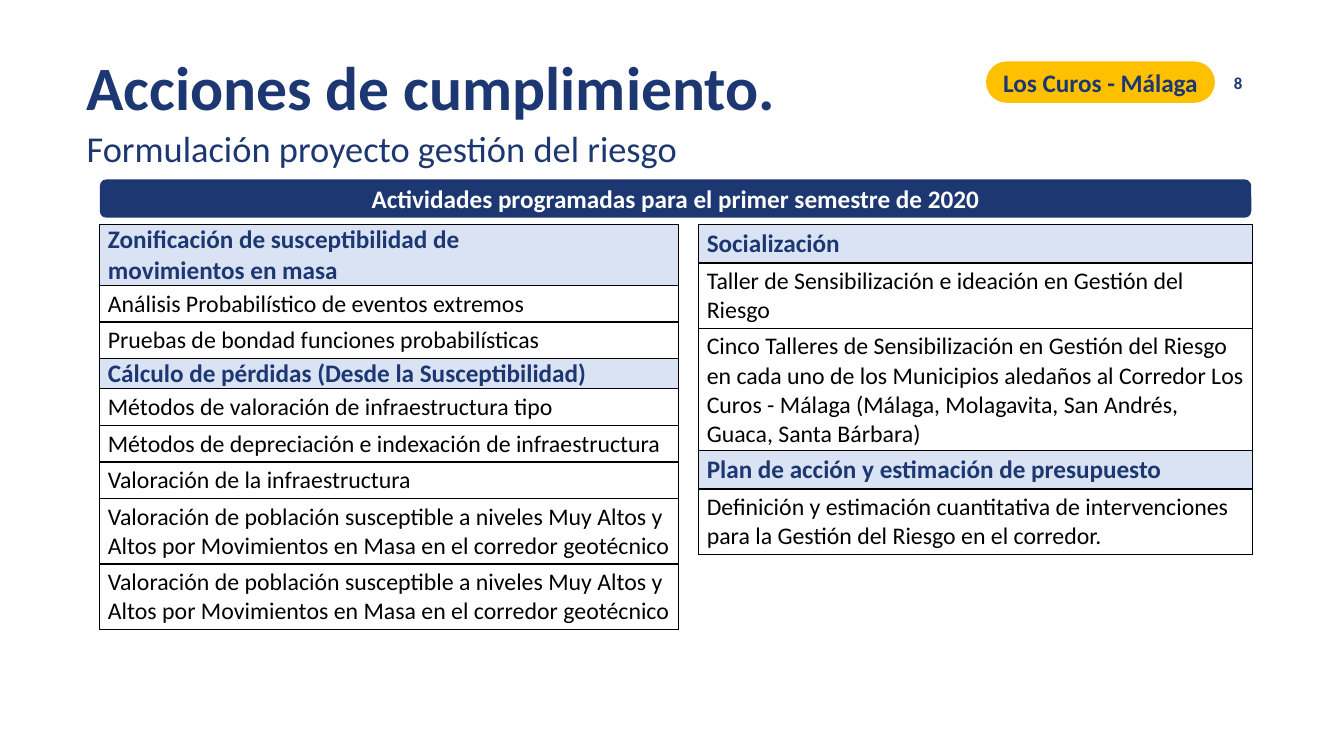
from lxml import etree
from pptx import Presentation
from pptx.dml.color import RGBColor
from pptx.enum.shapes import MSO_SHAPE
from pptx.enum.text import MSO_ANCHOR, PP_ALIGN
from pptx.oxml.ns import qn
from pptx.util import Inches, Pt

NAVY, GOLD, PALE, BLACK, WHITE = "1C3771", "FFC000", "DAE3F3", "000000", "FFFFFF"
HEADING = {"size": Pt(18), "bold": True, "color": NAVY}
ACTIVITY = {"size": Pt(17), "bold": False, "color": BLACK}
ONE_LINE, TWO_LINES = 0.24, 0.47


def rgb(value):
    return RGBColor.from_string(value)


class SlideBuilder:
    font_name = "Calibri"

    def __init__(self, page):
        self.page = page

    def fill_paragraph(self, para, text, style, align=PP_ALIGN.LEFT, line_spacing=None):
        para.alignment = align
        para.line_spacing = line_spacing
        for index, line in enumerate(text.split("\n")):
            if index:
                para.add_line_break()
            span = para.add_run()
            span.text = line
            span.font.name = self.font_name
            span.font.color.rgb = rgb(style["color"])
            for name in ("size", "bold"):
                setattr(span.font, name, style[name])

    def text_box(self, place, lines, align=PP_ALIGN.LEFT, anchor=MSO_ANCHOR.TOP,
                 line_spacing=None):
        box = self.page.shapes.add_textbox(*map(Inches, place))
        frame = box.text_frame
        frame.word_wrap = True
        frame.vertical_anchor = anchor
        for index, (text, style) in enumerate(lines):
            para = frame.add_paragraph() if index else frame.paragraphs[0]
            self.fill_paragraph(para, text, style, align, line_spacing)

    def banner(self, place, text, fill, color, rounding):
        shape = self.page.shapes.add_shape(MSO_SHAPE.ROUNDED_RECTANGLE, *map(Inches, place))
        shape.adjustments[0] = rounding
        shape.shadow.inherit = False
        shape.fill.solid()
        shape.fill.fore_color.rgb = rgb(fill)
        shape.line.fill.background()
        frame = shape.text_frame
        frame.word_wrap = True
        frame.vertical_anchor = MSO_ANCHOR.MIDDLE
        self.fill_paragraph(frame.paragraphs[0], text, {**HEADING, "color": color},
                            PP_ALIGN.CENTER)

    def border(self, cell):
        properties = cell._tc.get_or_add_tcPr()
        for index, side in enumerate(("a:lnL", "a:lnR", "a:lnT", "a:lnB")):
            line = etree.Element(qn(side), w=str(Pt(1)))
            fill = etree.SubElement(line, qn("a:solidFill"))
            etree.SubElement(fill, qn("a:srgbClr"), val=BLACK)
            properties.insert(index, line)

    def activity_table(self, left, top, width, rows, right_margin, heading_margin):
        height = sum(row[2] for row in rows)
        frame = self.page.shapes.add_table(
            len(rows), 1, *map(Inches, (left, top, width, height)))
        table = frame.table
        table.first_row = table.horz_banding = False
        for index, (text, style, row_height) in enumerate(rows):
            table.rows[index].height = Inches(row_height)
            cell = table.cell(index, 0)
            is_heading = style is HEADING
            vertical = heading_margin if is_heading else 0.04
            layout = {
                "margin_left": Inches(0.08), "margin_right": Inches(right_margin),
                "margin_top": Inches(vertical), "margin_bottom": Inches(vertical),
                "vertical_anchor": MSO_ANCHOR.MIDDLE,
            }
            for name, value in layout.items():
                setattr(cell, name, value)
            if is_heading:
                cell.fill.solid()
                cell.fill.fore_color.rgb = rgb(PALE)
            else:
                cell.fill.background()
            self.border(cell)
            self.fill_paragraph(cell.text_frame.paragraphs[0], text, style)


POPULATION = ("Valoración de población susceptible a niveles Muy Altos y Altos "
              "por Movimientos en Masa en el corredor geotécnico", ACTIVITY, TWO_LINES)
RISK_ROWS = [
    ("Zonificación de susceptibilidad de\nmovimientos en masa", HEADING, ONE_LINE),
    ("Análisis Probabilístico de eventos extremos", ACTIVITY, ONE_LINE),
    ("Pruebas de bondad funciones probabilísticas", ACTIVITY, ONE_LINE),
    ("Cálculo de pérdidas (Desde la Susceptibilidad)", HEADING, ONE_LINE),
    ("Métodos de valoración de infraestructura tipo", ACTIVITY, ONE_LINE),
    ("Métodos de depreciación e indexación de infraestructura", ACTIVITY, ONE_LINE),
    ("Valoración de la infraestructura", ACTIVITY, ONE_LINE),
    POPULATION,
    POPULATION,
]
OUTREACH_ROWS = [
    ("Socialización", HEADING, ONE_LINE),
    ("Taller de Sensibilización e ideación en Gestión del Riesgo", ACTIVITY, TWO_LINES),
    ("Cinco Talleres de Sensibilización en Gestión del Riesgo en cada uno de los "
     "Municipios aledaños al Corredor Los Curos - Málaga (Málaga, Molagavita, "
     "San Andrés, Guaca, Santa Bárbara)", ACTIVITY, TWO_LINES),
    ("Plan de acción y estimación de presupuesto", HEADING, ONE_LINE),
    ("Definición y estimación cuantitativa de intervenciones para la Gestión del "
     "Riesgo en el corredor.", ACTIVITY, ONE_LINE),
]


def main():
    deck = Presentation()
    deck.slide_width, deck.slide_height = Inches(13.33), Inches(7.5)
    builder = SlideBuilder(deck.slides.add_slide(deck.slide_layouts[6]))

    # Title, corridor label and page number
    builder.text_box((0.76, 0.39, 9.02, 1.34), [
        ("Acciones de cumplimiento.", {**HEADING, "size": Pt(44)}),
        ("Formulación proyecto gestión del riesgo",
         {**HEADING, "size": Pt(26), "bold": False}),
    ], line_spacing=1.07)
    builder.banner((9.78, 0.61, 2.27, 0.41), "Los Curos - Málaga", GOLD, NAVY, 0.5)
    builder.text_box((9.42, 0.62, 3, 0.4), [("8", {**HEADING, "size": Pt(12)})],
                     PP_ALIGN.RIGHT, MSO_ANCHOR.MIDDLE)

    # Activity tables under their shared banner
    builder.activity_table(0.99, 2.23, 5.74, RISK_ROWS, 0.04, 0)
    builder.activity_table(6.93, 2.23, 5.49, OUTREACH_ROWS, 0.08, 0.04)
    builder.banner((0.99, 1.78, 11.42, 0.38),
                   "Actividades programadas para el primer semestre de 2020", NAVY, WHITE, 0.17)

    deck.save("out.pptx")


if __name__ == "__main__":
    main()
